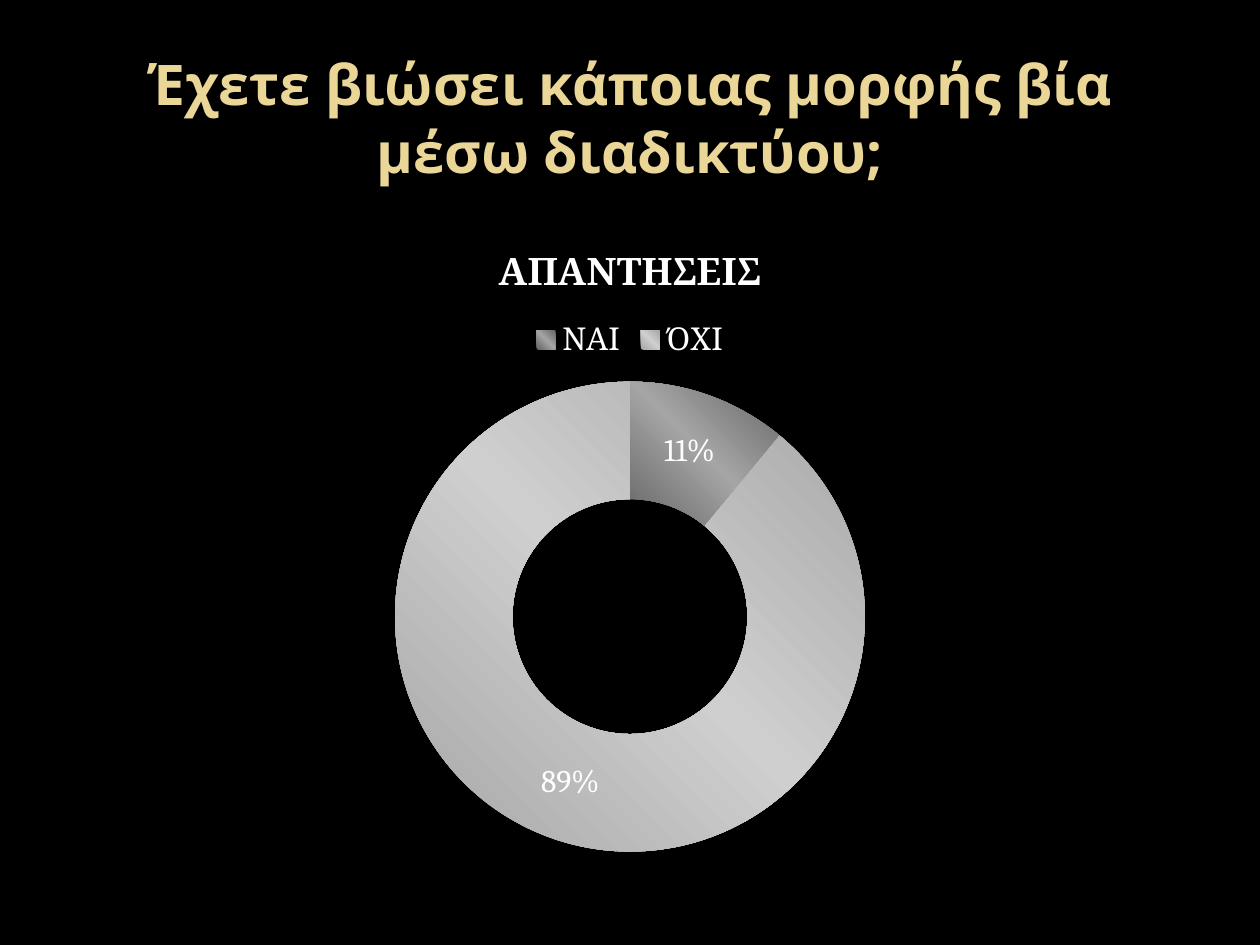
import lxml.etree
import pptx
import pptx.chart.data
import pptx.dml.color
import pptx.enum.chart
import pptx.enum.text
import pptx.oxml
import pptx.oxml.ns
import pptx.util

EMU_PER_PX = 914400 / 126
WHITE = "FFFFFF"
QUESTION = "Έχετε βιώσει κάποιας μορφής βία μέσω διαδικτύου;"
CHART_TITLE = "ΑΠΑΝΤΗΣΕΙΣ"
ANSWERS = {"ΝΑΙ": 11, "ΌΧΙ": 89}
# Edge and middle colour of each slice
SLICE_COLOURS = [("656565", "A5A5A5"), ("A5A5A5", "CFCFCF")]


def px(length):
    return pptx.util.Emu(round(length * EMU_PER_PX))


def colour(hex_string):
    return pptx.dml.color.RGBColor.from_string(hex_string)


def style_font(font, name, size, hex_string, bold=False):
    font.name = name
    font.size = pptx.util.Pt(size)
    font.bold = bold
    font.color.rgb = colour(hex_string)


def fill_diagonally(fill, edge, middle):
    """Gradient from the lower left to the upper right, lightest halfway."""
    fill.gradient()
    fill.gradient_angle = 45
    stops = fill.gradient_stops
    for stop in stops:
        stop.color.rgb = colour(edge)
    stop_list = stops[0]._gs.getparent()
    middle_stop = pptx.oxml.parse_xml(
        f'<a:gs {pptx.oxml.ns.nsdecls("a")} pos="50000">'
        f'<a:srgbClr val="{middle}"/></a:gs>')
    stop_list.insert(1, middle_stop)


def add_title(slide, left, top, width, height):
    box = slide.shapes.add_textbox(px(left), px(top), px(width), px(height))
    frame = box.text_frame
    frame.word_wrap = True
    frame.vertical_anchor = pptx.enum.text.MSO_ANCHOR.MIDDLE
    frame.text = QUESTION
    paragraph = frame.paragraphs[0]
    paragraph.alignment = pptx.enum.text.PP_ALIGN.CENTER
    style_font(paragraph.runs[0].font, "Noto Sans", 32, "EAD696", bold=True)


def add_answers_chart(slide, left, top, width, height):
    data = pptx.chart.data.CategoryChartData()
    data.categories = list(ANSWERS)
    data.add_series(CHART_TITLE, list(ANSWERS.values()))
    chart = slide.shapes.add_chart(
        pptx.enum.chart.XL_CHART_TYPE.DOUGHNUT,
        px(left), px(top), px(width), px(height), data).chart
    style_font(chart.font, "Cambria", 18, WHITE)

    # Title and legend
    chart.has_title = True
    title_frame = chart.chart_title.text_frame
    title_frame.text = CHART_TITLE
    style_font(title_frame.paragraphs[0].runs[0].font,
               "Cambria", 21.6, WHITE, bold=True)
    chart.has_legend = True
    chart.legend.position = pptx.enum.chart.XL_LEGEND_POSITION.TOP
    chart.legend.include_in_layout = False

    # Ring slices and percentages
    plot = chart.plots[0]
    plot.vary_by_categories = True
    for hole in plot._element.iter(pptx.oxml.ns.qn("c:holeSize")):
        hole.set("val", "50")
    plot.has_data_labels = True
    labels = plot.data_labels
    labels.show_percentage = True
    labels.show_value = False
    labels.number_format = "0%"
    labels.number_format_is_linked = False
    style_font(labels.font, "Cambria", 18, WHITE)
    for index, (edge, middle) in enumerate(SLICE_COLOURS):
        slice_format = plot.series[0].points[index].format
        fill_diagonally(slice_format.fill, edge, middle)
        slice_format.line.fill.background()


def main():
    presentation = pptx.Presentation()
    presentation.slide_width = px(1260)
    presentation.slide_height = px(945)
    slide = presentation.slides.add_slide(presentation.slide_layouts[6])
    slide.background.fill.solid()
    slide.background.fill.fore_color.rgb = colour("000000")

    add_title(slide, 63, 38, 1134, 158)
    add_answers_chart(slide, 63, 220, 1134, 649)
    presentation.save("out.pptx")


if __name__ == "__main__":
    main()
